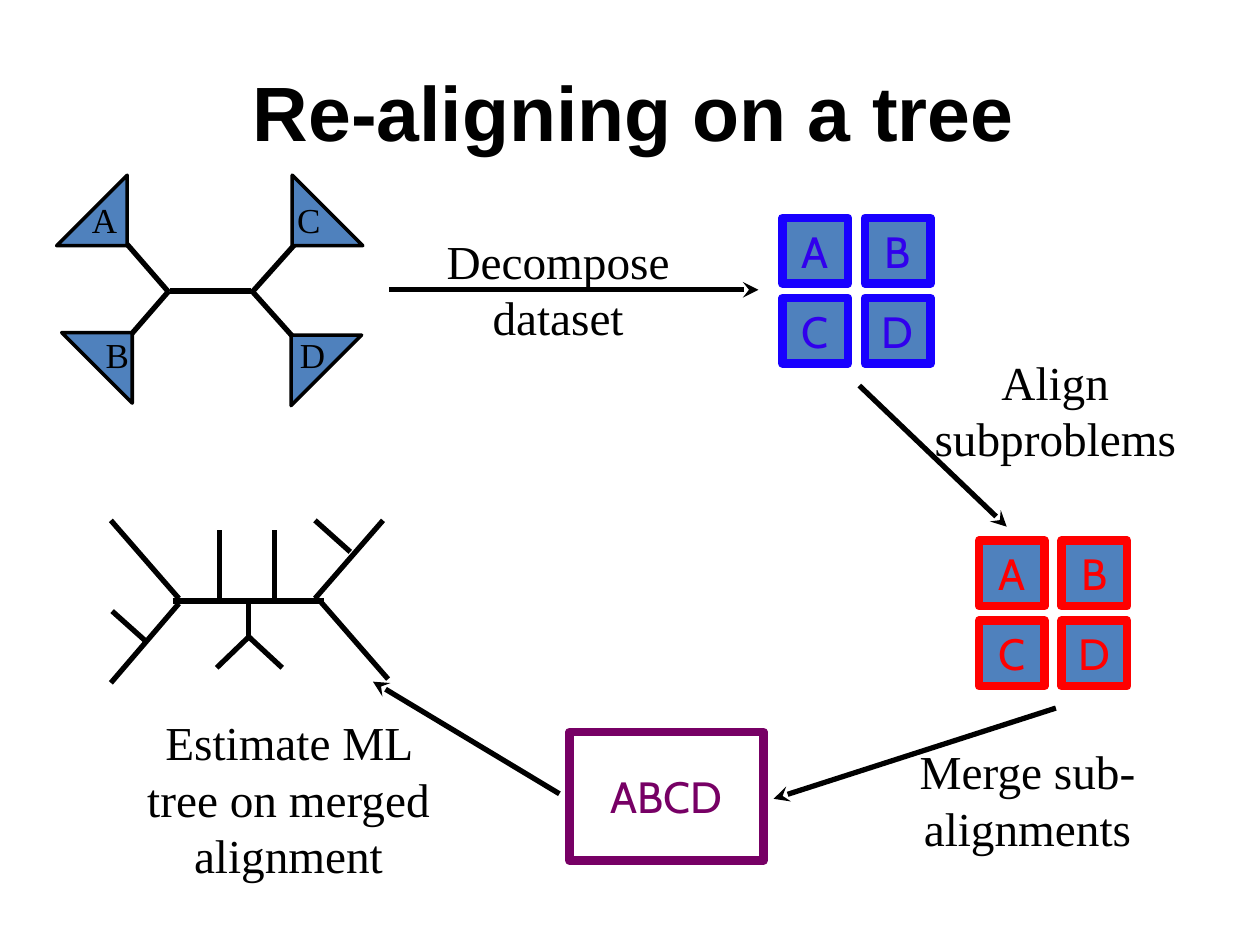
"""Build the slide on re-aligning sequences on a tree."""
from dataclasses import dataclass

from lxml.etree import SubElement
from pptx import Presentation
from pptx.dml.color import RGBColor
from pptx.enum.shapes import MSO_CONNECTOR as Connector, MSO_SHAPE as Preset
from pptx.enum.text import MSO_ANCHOR as Anchor, PP_ALIGN as Align
from pptx.oxml.ns import qn
from pptx.util import Inches, Pt

COLUMNS, ROWS = 100, 75
WIDTH, HEIGHT = Inches(10), Inches(7.5)
SERIF, SANS, LETTER = "Times New Roman", "Arial", "Cabin"
COLORS = {
    "black": "000000", "steel": "4F81BD", "blue": "1800FF",
    "indigo": "3100ED", "red": "FF0000", "purple": "770065",
}


@dataclass(frozen=True)
class Area:
    left: float
    top: float
    width: float
    height: float

    def emu(self) -> tuple:
        return col(self.left), row(self.top), col(self.width), row(self.height)


@dataclass(frozen=True)
class Segment:
    x1: float
    y1: float
    x2: float
    y2: float


@dataclass(frozen=True)
class Label:
    text: str
    area: Area


@dataclass(frozen=True)
class Leaf:
    name: str
    triangle: Area
    rotation: int
    flipped: bool
    caption: Area


@dataclass(frozen=True)
class Quartet:
    left: float
    top: float
    border: str
    ink: str


SUBTREE = [
    Segment(10.1, 19.4, 13.4, 23.2), Segment(10.1, 26.9, 13.4, 23.1),
    Segment(23.4, 19.4, 20, 23.2), Segment(23.4, 26.9, 20, 23.1),
    Segment(13.5, 23.1, 19.9, 23.1),
]
LEAVES = [
    Leaf("A", Area(4.5, 13.9, 5.6, 5.6), 270, False, Area(6.2, 15.4, 4.2, 4.1)),
    Leaf("B", Area(4.9, 26.4, 5.6, 5.6), 270, True, Area(7.2, 26.1, 4.2, 4.1)),
    Leaf("C", Area(23.2, 13.9, 5.6, 5.6), 90, True, Area(22.4, 15.4, 4.2, 4.1)),
    Leaf("D", Area(23.1, 26.6, 5.6, 5.6), 90, False, Area(22.7, 26.1, 4.2, 4.1)),
]
MERGED_TREE = [
    Segment(8.8, 41.3, 14.2, 47.5), Segment(8.8, 54.2, 14.2, 47.9),
    Segment(30.4, 41.3, 25, 47.5), Segment(30.8, 53.9, 25.4, 47.7),
    Segment(13.7, 47.7, 25.7, 47.7), Segment(17.4, 42.1, 17.4, 47.8),
    Segment(21.8, 42.1, 21.8, 47.8), Segment(25, 41.3, 27.8, 43.8),
    Segment(8.9, 48.5, 11.7, 51), Segment(19.7, 47.6, 19.7, 50.6),
    Segment(19.7, 50.5, 22.4, 53), Segment(19.9, 50.4, 17.2, 53),
]
ARROWS = [
    Segment(60.2, 23, 30.9, 23), Segment(61.4, 63.4, 83.8, 56.2),
    Segment(79.9, 41.8, 68.2, 30.6), Segment(29.6, 54.1, 44.4, 63),
]
STEPS = [
    Label("Decompose dataset", Area(30, 18.3, 28.6, 9.2)),
    Label("Align subproblems", Area(73.5, 27.9, 20.5, 9.2)),
    Label("Merge sub-alignments", Area(70.2, 58.8, 22.7, 9.3)),
    Label("Estimate ML tree on merged alignment", Area(10.1, 56.6, 25.6, 13.5)),
]
QUARTETS = [Quartet(62.1, 17.3, "blue", "indigo"), Quartet(77.7, 42.9, "red", "red")]
TILE, PITCH_X, PITCH_Y = 5.2, 6.55, 6.35


def col(count: float) -> int:
    return round(WIDTH * count / COLUMNS)


def row(count: float) -> int:
    return round(HEIGHT * count / ROWS)


def rgb(name: str) -> RGBColor:
    return RGBColor.from_string(COLORS[name])


def write(box, text: str, size: float, font: str, color: str = "black",
          bold: bool = False, before: float = 0) -> None:
    frame = box.text_frame
    frame.word_wrap = True
    frame.vertical_anchor = Anchor.MIDDLE
    para = frame.paragraphs[0]
    para.alignment = Align.CENTER
    para.space_before = Pt(before)
    span = para.add_run()
    span.text = text
    span.font.size, span.font.name, span.font.bold = Pt(size), font, bold
    span.font.color.rgb = rgb(color)


def clear_margins(box) -> None:
    frame = box.text_frame
    frame.margin_left = frame.margin_top = frame.margin_right = frame.margin_bottom = 0


def add_label(shapes, label: Label, size: float, before: float = 0) -> None:
    box = shapes.add_textbox(*label.area.emu())
    clear_margins(box)
    write(box, label.text, size, SERIF, before=before)


def add_line(shapes, segment: Segment, arrow: bool = False) -> None:
    line = shapes.add_connector(Connector.STRAIGHT, col(segment.x1), row(segment.y1),
                                col(segment.x2), row(segment.y2))
    line.line.color.rgb = rgb("black")
    line.line.width = Pt(3)
    if arrow:
        SubElement(line.line._get_or_add_ln(), qn("a:headEnd"), type="stealth")
    SubElement(line._element.spPr, qn("a:effectLst"))


def add_outlined(shapes, preset, area: Area, border: str, weight: float, filled: bool = True):
    shape = shapes.add_shape(preset, *area.emu())
    shape.shadow.inherit = False
    if filled:
        shape.fill.solid()
        shape.fill.fore_color.rgb = rgb("steel")
    else:
        shape.fill.background()
    shape.line.color.rgb = rgb(border)
    shape.line.width = Pt(weight)
    return shape


def add_tile(shapes, label: Label, border: str, ink: str, filled: bool = True) -> None:
    tile = add_outlined(shapes, Preset.RECTANGLE, label.area, border, 5, filled)
    clear_margins(tile)
    write(tile, label.text, 25, LETTER, ink)


def add_quartet(shapes, quartet: Quartet) -> None:
    for index, letter in enumerate("ABCD"):
        down, across = divmod(index, 2)
        area = Area(quartet.left + across * PITCH_X, quartet.top + down * PITCH_Y, TILE, TILE)
        add_tile(shapes, Label(letter, area), quartet.border, quartet.ink)


def add_subtree(shapes) -> None:
    for segment in SUBTREE:
        add_line(shapes, segment)
    for leaf in LEAVES:
        triangle = add_outlined(shapes, Preset.RIGHT_TRIANGLE, leaf.triangle, "black", 2)
        triangle.rotation = leaf.rotation
        if leaf.flipped:
            triangle._element.spPr.xfrm.set("flipH", "1")
    for leaf in LEAVES:
        add_label(shapes, Label(leaf.name, leaf.caption), 20, before=11.8)


def main() -> None:
    deck = Presentation()
    deck.slide_width, deck.slide_height = WIDTH, HEIGHT
    page = deck.slides.add_slide(deck.slide_layouts[5])
    shapes = page.shapes
    title = shapes.title
    title.left, title.top, title.width, title.height = Area(7.5, 2.5, 85, 12.5).emu()
    title.text_frame.margin_right = Inches(0.04)
    write(title, "Re-aligning on a tree", 44, SANS, bold=True)
    add_subtree(shapes.add_group_shape().shapes)
    for arrow in ARROWS:
        add_line(shapes, arrow, arrow=True)
    for step in STEPS:
        add_label(shapes, step, 27)
    for quartet in QUARTETS:
        add_quartet(shapes, quartet)
    add_tile(shapes, Label("ABCD", Area(45.2, 58.1, 15.4, 10.2)), "purple", "purple", False)
    merged = shapes.add_group_shape().shapes
    for segment in MERGED_TREE:
        add_line(merged, segment)
    deck.save("out.pptx")


if __name__ == "__main__":
    main()
